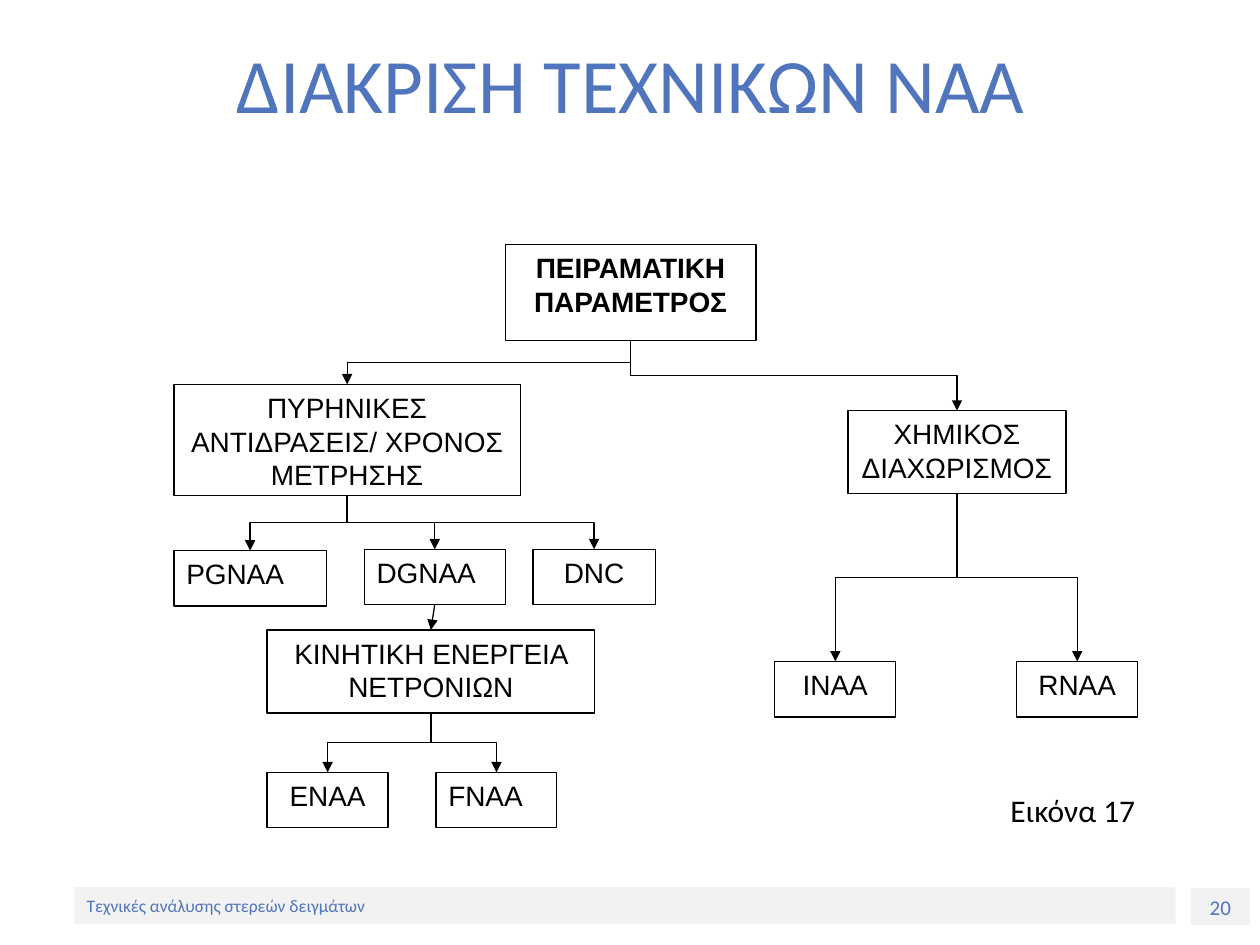
from pptx import Presentation
from pptx.dml.color import RGBColor
from pptx.enum.shapes import MSO_CONNECTOR, MSO_SHAPE
from pptx.enum.text import MSO_ANCHOR, PP_ALIGN
from pptx.oxml.ns import qn
from pptx.util import Inches, Pt
from lxml.etree import SubElement

THEME = {
    "heading_font": "Calibri", "diagram_font": "Arial",
    "accent": "5075BC", "ink": "000000", "paper": "FFFFFF", "band": "F2F2F2",
    "title": 44, "caption": 18, "node": 16, "number": 12, "footer": 10,
    "line": 0.75,
}
LEFT, CENTER = PP_ALIGN.LEFT, PP_ALIGN.CENTER
TOP, MIDDLE = MSO_ANCHOR.TOP, MSO_ANCHOR.MIDDLE

TITLE = ("ΔΙΑΚΡΙΣΗ ΤΕΧΝΙΚΩΝ ΝΑΑ", (0.51, 0.03, 9, 1.25))
PANEL = (0.2, 1.94, 9.61, 4.85)
LABELS = [
    ("20", (9.45, 7.05, 0.47, 0.29), "band", "accent", "number", CENTER, TOP),
    ("Τεχνικές ανάλυσης στερεών δειγμάτων", (0.59, 7.04, 8.74, 0.29),
     "band", "accent", "footer", LEFT, MIDDLE),
    ("Εικόνα 17", (7.92, 6.19, 1.26, 0.47), "paper", "ink", "caption", LEFT, MIDDLE),
]
NODES = {
    "parameter": ("ΠΕΙΡΑΜΑΤΙΚΗ ΠΑΡΑΜΕΤΡΟΣ", (4.01, 1.94, 1.99, 0.76), CENTER),
    "reactions": ("ΠΥΡΗΝΙΚΕΣ ΑΝΤΙΔΡΑΣΕΙΣ/ ΧΡΟΝΟΣ ΜΕΤΡΗΣΗΣ", (1.38, 3.05, 2.75, 0.88), CENTER),
    "separation": ("ΧΗΜΙΚΟΣ ΔΙΑΧΩΡΙΣΜΟΣ", (6.73, 3.26, 1.73, 0.66), CENTER),
    "energy": ("ΚΙΝΗΤΙΚΗ ΕΝΕΡΓΕΙΑ ΝΕΤΡΟΝΙΩΝ", (2.12, 5, 2.6, 0.66), CENTER),
    "pgnaa": ("PGNAA", (1.38, 4.37, 1.21, 0.44), LEFT),
    "dgnaa": ("DGNAA", (2.89, 4.36, 1.12, 0.44), LEFT),
    "dnc": ("DNC", (4.23, 4.36, 0.97, 0.44), CENTER),
    "enaa": ("ENAA", (2.12, 6.13, 0.96, 0.44), CENTER),
    "fnaa": ("FNAA", (3.46, 6.13, 0.96, 0.44), LEFT),
    "inaa": ("INAA", (6.15, 5.25, 0.96, 0.44), CENTER),
    "rnaa": ("RNAA", (8.07, 5.25, 0.96, 0.44), CENTER),
}
BRANCHES = {
    "parameter": ["reactions", "separation"],
    "reactions": ["pgnaa", "dgnaa", "dnc"],
    "separation": ["inaa", "rnaa"],
    "energy": ["enaa", "fnaa"],
}
STRAIGHT_LINK = ("dgnaa", "energy")
TOP_SITE, BOTTOM_SITE = 0, 2


def color(name):
    return RGBColor.from_string(THEME[name])


def write(shape, text, font, size, ink, align, anchor, bold=False):
    frame = shape.text_frame
    frame.word_wrap = True
    frame.vertical_anchor = anchor
    frame.text = text
    paragraph = frame.paragraphs[0]
    paragraph.alignment = align
    formats = {"name": THEME[font], "size": Pt(THEME[size]), "bold": bold}
    for attribute, value in formats.items():
        setattr(paragraph.font, attribute, value)
    paragraph.font.color.rgb = color(ink)


def add_box(slide, kind, place, fill=None, outline=False):
    shape = slide.shapes.add_shape(kind, *map(Inches, place))
    shape.shadow.inherit = False
    if fill:
        shape.fill.solid()
        shape.fill.fore_color.rgb = color(fill)
    else:
        shape.fill.background()
    if outline:
        shape.line.color.rgb = color("ink")
        shape.line.width = Pt(THEME["line"])
    else:
        shape.line.fill.background()
    return shape


def turn_downward(connector):
    start_x, start_y = connector.begin_x, connector.begin_y
    end_x, end_y = connector.end_x, connector.end_y
    across, down = abs(end_x - start_x), end_y - start_y
    places = {
        "left": (start_x + end_x - down) // 2,
        "top": (start_y + end_y - across) // 2,
        "width": down,
        "height": across,
    }
    for attribute, value in places.items():
        setattr(connector, attribute, value)
    rightward = end_x > start_x
    transform = connector._element.spPr.find(qn("a:xfrm"))
    transform.set("rot", str((270 if rightward else 90) * 60000))
    transform.set("flipH", "1" if rightward else "0")
    transform.set("flipV", "0")


def add_arrow(slide, kind, parent, child):
    connector = slide.shapes.add_connector(kind, 0, 0, 0, 0)
    connector.begin_connect(parent, BOTTOM_SITE)
    connector.end_connect(child, TOP_SITE)
    connector.line.color.rgb = color("ink")
    connector.line.width = Pt(THEME["line"])
    properties = connector._element.spPr
    SubElement(properties.find(qn("a:ln")), qn("a:tailEnd"), type="triangle")
    SubElement(properties, qn("a:effectLst"))
    if kind == MSO_CONNECTOR.ELBOW:
        turn_downward(connector)


def main():
    presentation = Presentation()
    presentation.slide_width, presentation.slide_height = Inches(10), Inches(7.5)
    slide = presentation.slides.add_slide(presentation.slide_layouts[5])

    text, place = TITLE
    title = slide.shapes.title
    for attribute, value in zip(("left", "top", "width", "height"), place):
        setattr(title, attribute, Inches(value))
    write(title, text, "heading_font", "title", "accent", CENTER, MIDDLE)

    add_box(slide, MSO_SHAPE.RECTANGLE, PANEL, "paper")
    for text, place, fill, ink, size, align, anchor in LABELS:
        label = add_box(slide, MSO_SHAPE.RECTANGLE, place, fill)
        write(label, text, "heading_font", size, ink, align, anchor)

    boxes = {}
    for name, (text, place, align) in NODES.items():
        boxes[name] = add_box(slide, MSO_SHAPE.FLOWCHART_PROCESS, place, outline=True)
        write(boxes[name], text, "diagram_font", "node", "ink", align, TOP,
              bold=name == "parameter")

    for parent, children in BRANCHES.items():
        for child in children:
            add_arrow(slide, MSO_CONNECTOR.ELBOW, boxes[parent], boxes[child])
    parent, child = STRAIGHT_LINK
    add_arrow(slide, MSO_CONNECTOR.STRAIGHT, boxes[parent], boxes[child])

    presentation.save("out.pptx")


if __name__ == "__main__":
    main()
